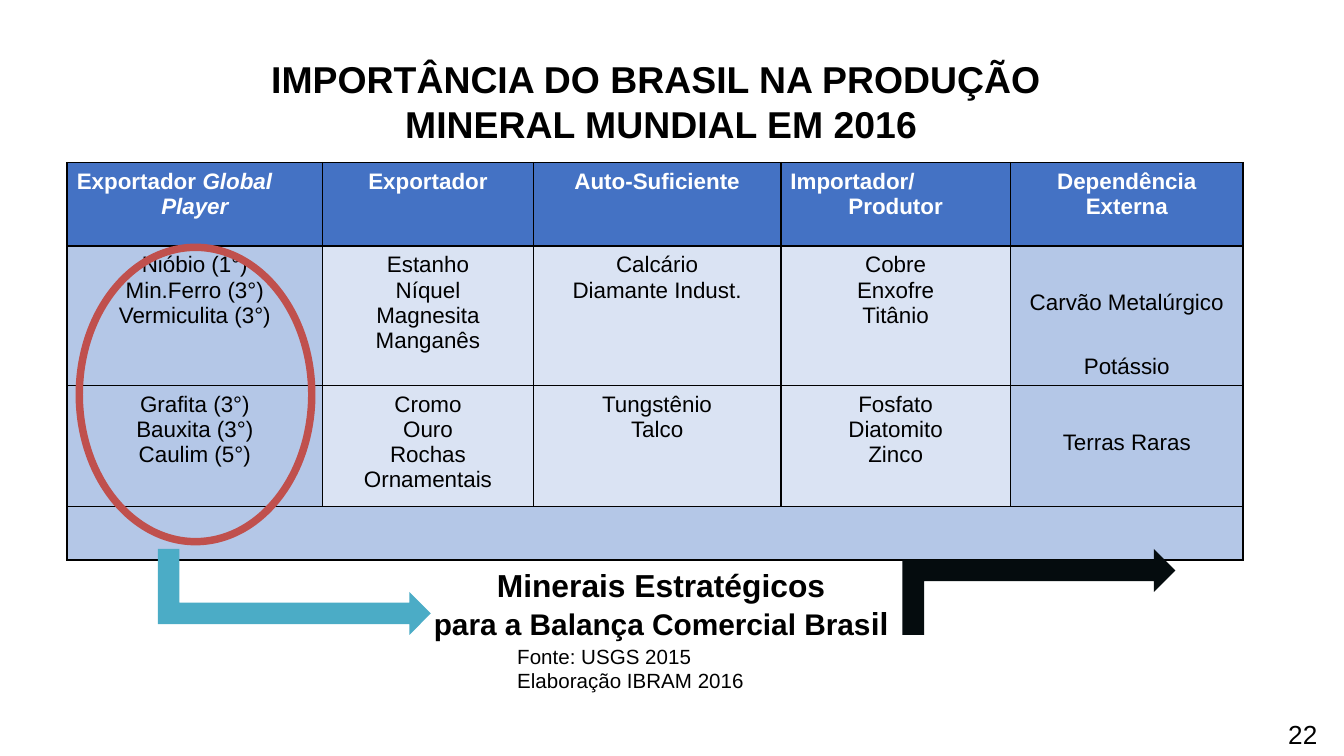
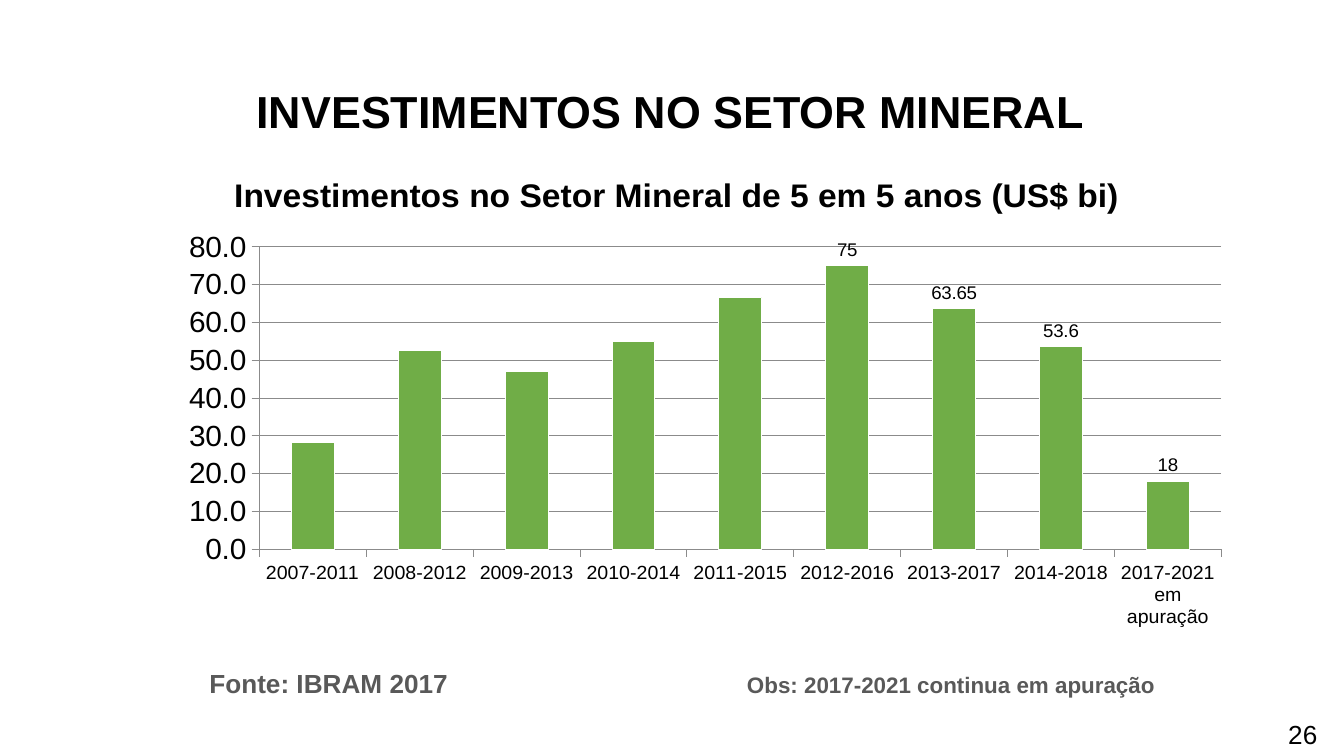
from dataclasses import dataclass

from lxml.etree import SubElement
from pptx import Presentation
from pptx.chart.data import CategoryChartData
from pptx.dml.color import RGBColor
from pptx.enum.chart import XL_CHART_TYPE as ChartType
from pptx.enum.chart import XL_LABEL_POSITION as LabelPosition
from pptx.enum.chart import XL_TICK_MARK as TickMark
from pptx.enum.shapes import MSO_SHAPE as Shape
from pptx.enum.text import MSO_ANCHOR as Anchor
from pptx.enum.text import MSO_AUTO_SIZE as AutoSize
from pptx.enum.text import PP_ALIGN as Align
from pptx.oxml.ns import qn
from pptx.util import Inches, Pt

COLUMNS, ROWS = 100, 56.25
TITLE_ONLY = 5


@dataclass(frozen=True)
class Theme:
    font: str = "Arial"
    ink: str = "000000"
    paper: str = "FFFFFF"
    muted: str = "595959"
    header: str = "4472C4"
    edge_cell: str = "B4C7E7"
    middle_cell: str = "DAE3F3"
    teal: str = "4BACC6"
    black: str = "050C0E"
    red: str = "C0504D"
    green: str = "70AD47"
    axis: str = "8B8B8B"
    title: float = 20
    big_title: float = 24
    chart_title: float = 18
    callout: float = 17
    callout_small: float = 16
    scale: float = 16
    footer: float = 14
    table: float = 12
    source: float = 11
    category: float = 10.5
    label: float = 10


THEME = Theme()


def rgb(code):
    return RGBColor.from_string(code)


def style_font(font, size, color=THEME.ink, bold=False, italic=False):
    font.name = THEME.font
    font.size = Pt(size)
    font.color.rgb = rgb(color)
    font.bold = bold
    font.italic = italic


def write(frame, lines, align=Align.LEFT, gap=0, tab=None, **style):
    """Fill a text frame; a line is a string or a list of (text, style changes)."""
    for index, line in enumerate(lines):
        para = frame.paragraphs[0] if index == 0 else frame.add_paragraph()
        para.alignment = align[index] if isinstance(align, list) else align
        para.space_before = Pt(gap if index else 0)
        if tab:
            stops = SubElement(para._p.get_or_add_pPr(), qn("a:tabLst"))
            SubElement(stops, qn("a:tab"), pos=str(tab), algn="l")
        for text, changes in [(line, {})] if isinstance(line, str) else line:
            span = para.add_run()
            span.text = text
            style_font(span.font, **{**style, **changes})


def border_cell(cell, color, width):
    props = cell._tc.get_or_add_tcPr()
    for side in ("lnL", "lnR", "lnT", "lnB"):
        line = SubElement(props, qn(f"a:{side}"), w=str(Pt(width)))
        fill = SubElement(line, qn("a:solidFill"))
        SubElement(fill, qn("a:srgbClr"), val=color)


def place_plot(chart, **shares):
    """Fix the inner plot area as shares of the chart's size."""
    area = chart.element.find(".//" + qn("c:plotArea"))
    for old in area.findall(qn("c:layout")):
        area.remove(old)
    layout = SubElement(area, qn("c:layout"))
    area.insert(0, layout)
    manual = SubElement(layout, qn("c:manualLayout"))
    settings = {"layoutTarget": "inner", "xMode": "edge", "yMode": "edge", **shares}
    for name, value in settings.items():
        SubElement(manual, qn(f"c:{name}"), val=str(value))


class Deck:
    def __init__(self):
        self.show = Presentation()
        self.show.slide_width = Inches(10)
        self.show.slide_height = self.show.slide_width * 9 // 16
        self.page = None

    def across(self, columns):
        return round(self.show.slide_width * columns / COLUMNS)

    def down(self, rows):
        return round(self.show.slide_height * rows / ROWS)

    def area(self, left, top, width, height):
        return self.across(left), self.down(top), self.across(width), self.down(height)

    def start_page(self, lines, place, size, number):
        self.page = self.show.slides.add_slide(self.show.slide_layouts[TITLE_ONLY])
        title = self.page.shapes.title
        title.left, title.top, title.width, title.height = self.area(*place)
        frame = title.text_frame
        frame.auto_size = AutoSize.NONE
        frame.vertical_anchor = Anchor.TOP
        write(frame, lines, align=Align.CENTER, size=size, bold=True)
        self.text([number], (76.5, 53, 22.5, 3), align=Align.RIGHT, size=THEME.footer)

    def text(self, lines, place, **style):
        frame = self.page.shapes.add_textbox(*self.area(*place)).text_frame
        frame.word_wrap = True
        write(frame, lines, **style)

    def shape(self, kind, place, fill=None, line=None, width=0, turn=0, flip=False):
        shape = self.page.shapes.add_shape(kind, *self.area(*place))
        shape.shadow.inherit = False
        shape.rotation = turn
        if flip:
            shape._element.spPr.find(qn("a:xfrm")).set("flipV", "1")
        if fill:
            shape.fill.solid()
            shape.fill.fore_color.rgb = rgb(fill)
        else:
            shape.fill.background()
        if line:
            shape.line.color.rgb = rgb(line)
            shape.line.width = Pt(width)
        else:
            shape.line.fill.background()

    def table(self, place, widths, heights):
        table = self.page.shapes.add_table(
            len(heights), len(widths), *self.area(*place)).table
        table.horz_banding = False
        for column, width in zip(table.columns, widths):
            column.width = self.across(width)
        for row, height in zip(table.rows, heights):
            row.height = self.down(height)
        return table

    def cell(self, cell, lines, fill, lead=0, **style):
        """Format one table cell; lead is extra space, in rows, above the text."""
        border_cell(cell, THEME.ink, 0.96)
        cell.fill.solid()
        cell.fill.fore_color.rgb = rgb(fill)
        cell.margin_left = cell.margin_right = self.across(0.72)
        cell.margin_top = self.down(0.5 + lead)
        cell.margin_bottom = self.down(0.2 if lead else 0.5)
        write(cell.text_frame, lines, size=THEME.table,
              **{"align": Align.CENTER, **style})

    def column_chart(self, place, title, values):
        data = CategoryChartData()
        data.categories = list(values)
        data.add_series("Series 1", list(values.values()))
        chart = self.page.shapes.add_chart(
            ChartType.COLUMN_CLUSTERED, *self.area(*place), data).chart
        style_font(chart.font, THEME.label)
        chart.has_legend = False
        chart.has_title = True
        write(chart.chart_title.text_frame, [title], align=Align.CENTER,
              size=THEME.chart_title, bold=True)
        chart.chart_title.include_in_layout = False
        plot = chart.plots[0]
        plot.gap_width = 150
        plot.vary_by_categories = False
        for axis, size in ((chart.category_axis, THEME.category),
                           (chart.value_axis, THEME.scale)):
            style_font(axis.tick_labels.font, size)
            axis.major_tick_mark = TickMark.OUTSIDE
            axis.minor_tick_mark = TickMark.NONE
            self.hairline(axis.format.line, THEME.axis)
        scale = chart.value_axis
        scale.minimum_scale, scale.maximum_scale, scale.major_unit = 0, 80, 10
        scale.tick_labels.number_format = "0.0"
        scale.tick_labels.number_format_is_linked = False
        scale.has_major_gridlines = True
        self.hairline(scale.major_gridlines.format.line, THEME.axis)
        place_plot(chart, x=0.13, y=0.205, w=0.853, h=0.652)
        series = plot.series[0]
        series.format.fill.solid()
        series.format.fill.fore_color.rgb = rgb(THEME.green)
        self.hairline(series.format.line, THEME.paper)
        return series

    @staticmethod
    def hairline(line, color):
        line.color.rgb = rgb(color)
        line.width = Pt(0.5)

    @staticmethod
    def label_points(series, indexes):
        series.data_labels.show_value = False
        for index in indexes:
            label = series.points[index].data_label
            style_font(label.font, THEME.label)
            label.position = LabelPosition.OUTSIDE_END


HEADERS = [
    [[("Exportador ", {}), ("Global ", {"italic": True})],
     [("Player", {"italic": True})]],
    ["Exportador"],
    ["Auto-Suficiente"],
    ["Importador/", "Produtor"],
    ["Dependência Externa"],
]
MINERALS = [
    [["Nióbio (1°)", "Min.Ferro (3°)", "Vermiculita (3°)"],
     ["Estanho", "Níquel", "Magnesita", "Manganês"],
     ["Calcário", "Diamante Indust."],
     ["Cobre", "Enxofre", "Titânio"],
     ["Carvão Metalúrgico", "Potássio"]],
    [["Grafita (3°)", "Bauxita (3°)", "Caulim (5°)"],
     ["Cromo", "Ouro", "Rochas Ornamentais"],
     ["Tungstênio", "Talco"],
     ["Fosfato", "Diatomito", "Zinco"],
     ["Terras Raras"]],
]
INVESTMENTS = {
    "2007-2011": 28.3, "2008-2012": 52.5, "2009-2013": 47, "2010-2014": 55,
    "2011-2015": 66.65, "2012-2016": 75, "2013-2017": 63.65, "2014-2018": 53.6,
    "2017-2021 em apuração": 18,
}


def build_minerals(deck):
    deck.start_page(["IMPORTÂNCIA DO BRASIL NA PRODUÇÃO ", "MINERAL MUNDIAL EM 2016"],
                    (18.3, 3.7, 61.8, 7.7), THEME.title, "22")
    table = deck.table((5, 12.1, 87.5, 28.7), [19, 15.7, 18.4, 17.1, 17.3],
                       [6.2, 10.3, 8.2, 4])
    last = len(HEADERS) - 1
    for column, lines in enumerate(HEADERS):
        align = [Align.LEFT, Align.CENTER] if len(lines) > 1 else Align.CENTER
        deck.cell(table.cell(0, column), lines, THEME.header, align=align,
                  color=THEME.paper, bold=True)
    for row, groups in enumerate(MINERALS, start=1):
        for column, lines in enumerate(groups):
            fill = THEME.edge_cell if column in (0, last) else THEME.middle_cell
            spacing = {"lead": 2.8, "gap": 20.7} if column == last else {}
            deck.cell(table.cell(row, column), lines, fill, **spacing)
    for column in range(last + 1):
        deck.cell(table.cell(3, column), [], THEME.edge_cell)
    table.cell(3, 0).merge(table.cell(3, last))

    deck.shape(Shape.BENT_UP_ARROW, (18.7, 33.9, 6.4, 20.3), THEME.teal, turn=90)
    deck.shape(Shape.BENT_UP_ARROW, (74.1, 33.9, 6.4, 20.3), THEME.black,
               turn=270, flip=True)
    deck.text(["Minerais Estratégicos",
               [("para a Balança Comercial Bras", {"size": THEME.callout_small}),
                ("il", {})]],
              (30.7, 41.6, 37, 6.7), align=Align.CENTER, size=THEME.callout, bold=True)
    deck.text(["Fonte: USGS 2015", "Elaboração IBRAM 2016"], (37.5, 47.4, 19.5, 4.6),
              size=THEME.source)
    deck.shape(Shape.OVAL, (5.9, 18.4, 17.3, 21.9), line=THEME.red, width=4)


def build_investments(deck):
    deck.start_page(["INVESTIMENTOS NO SETOR MINERAL "], (2.4, 5.7, 95.8, 9),
                    THEME.big_title, "26")
    deck.text([[("Fonte: IBRAM 2017\t", {}),
                ("Obs: 2017-2021 continua em apuração", {"size": THEME.table})]],
              (14.6, 49.2, 75, 3.3), tab=deck.across(40), size=THEME.footer,
              color=THEME.muted, bold=True)
    series = deck.column_chart(
        (8.4, 11.3, 83.9, 35.4),
        "Investimentos no Setor Mineral de 5 em 5 anos (US$ bi)", INVESTMENTS)
    deck.label_points(series, range(5, len(INVESTMENTS)))


def main():
    deck = Deck()
    build_minerals(deck)
    build_investments(deck)
    deck.show.save("out.pptx")


if __name__ == "__main__":
    main()
